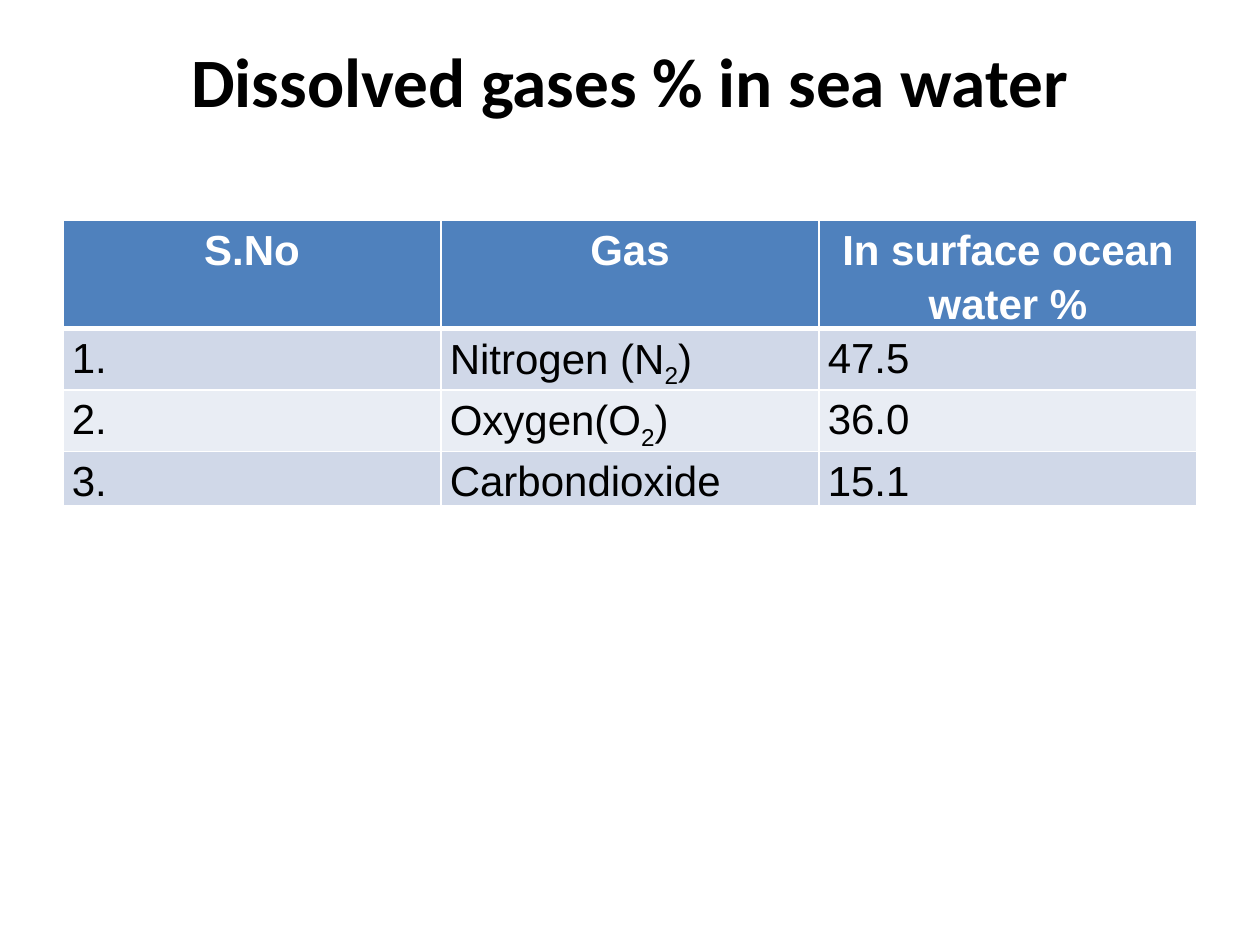
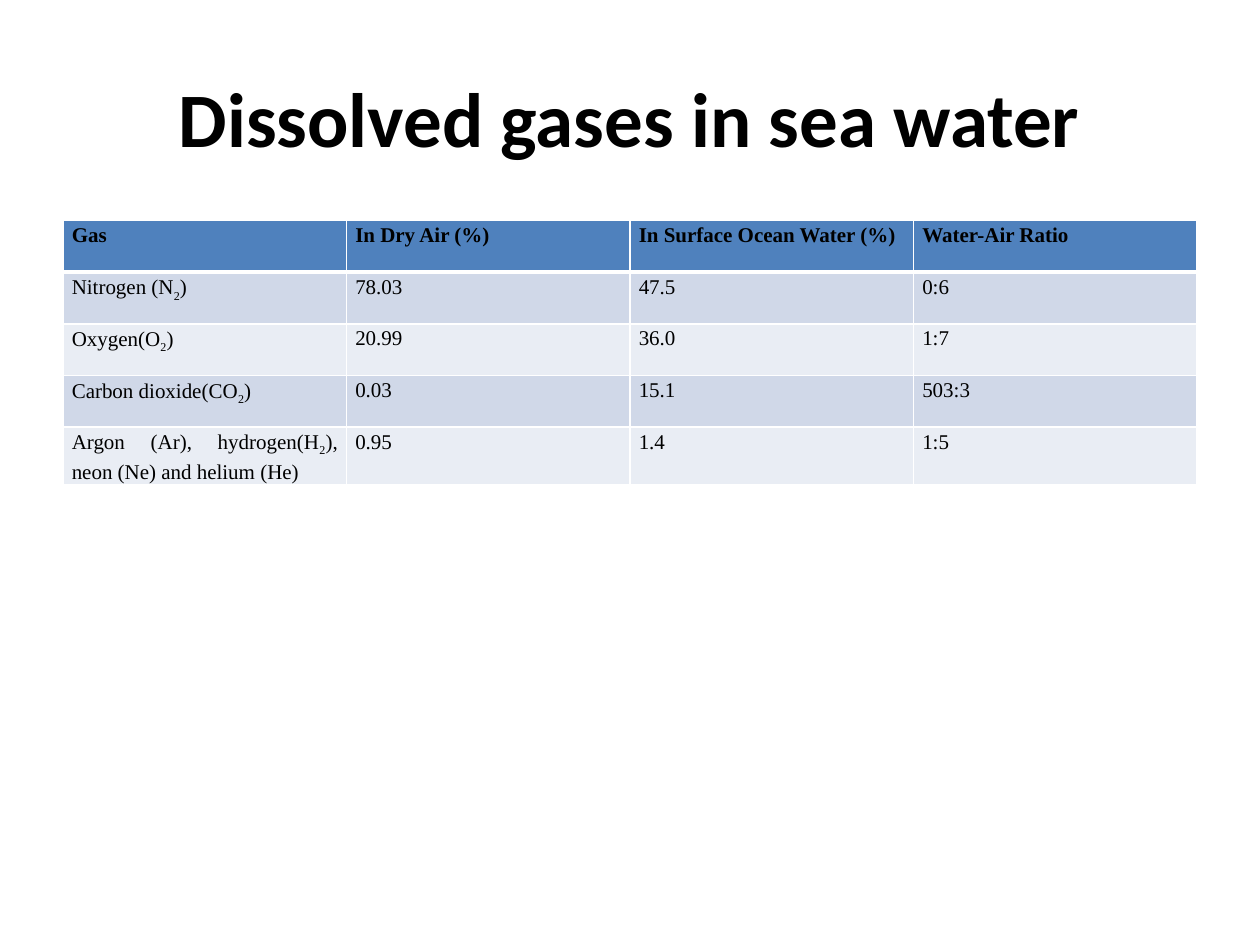
from lxml import etree
from pptx import Presentation
from pptx import util as u
from pptx.dml.color import RGBColor
from pptx.enum import text
from pptx.oxml import ns

BLACK = RGBColor(0x00, 0x00, 0x00)
WHITE = RGBColor(0xFF, 0xFF, 0xFF)
BLUE = RGBColor(0x4F, 0x81, 0xBD)
BANDS = (RGBColor(0xE9, 0xED, 0xF4), RGBColor(0xD0, 0xD8, 0xE8))
CENTER = text.PP_ALIGN.CENTER
FULL = text.PP_ALIGN.JUSTIFY


def put(frame, words, font, size, color=BLACK, bold=False, align=FULL, line=None, after=None):
    para = frame.paragraphs[0]
    para.alignment = align
    para.line_spacing = line
    para.space_after = after
    for i, part in enumerate(words.split("~")):
        run = para.add_run()
        run.text = part
        run.font.name = font
        run.font.size = u.Pt(size)
        run.font.bold = bold
        run.font.color.rgb = color
        if i % 2:
            run._r.get_or_add_rPr().set("baseline", "-25000")


def edge(cell, side, width):
    props = cell._tc.get_or_add_tcPr()
    line = etree.SubElement(props, ns.qn(f"a:ln{side}"), w=str(u.Pt(width)))
    fill = etree.SubElement(line, ns.qn("a:solidFill"))
    etree.SubElement(fill, ns.qn("a:srgbClr"), val=str(WHITE))


class Deck:
    left = u.Inches(0.5)
    width = u.Inches(9)

    def __init__(self):
        self.file = Presentation()
        self.file.slide_width = u.Inches(10)
        self.file.slide_height = u.Inches(7.5)
        self.slide = None

    def start(self):
        self.slide = self.file.slides.add_slide(self.file.slide_layouts[5])

    def title(self, words, size, raised=False):
        box = self.slide.shapes.title
        box.left, box.top = self.left, u.Inches(0.3)
        box.width, box.height = self.width, u.Inches(1.25)
        frame = box.text_frame
        frame.word_wrap = True
        frame.auto_size = text.MSO_AUTO_SIZE.NONE
        frame.vertical_anchor = text.MSO_ANCHOR.MIDDLE
        if raised:
            frame.vertical_anchor = text.MSO_ANCHOR.TOP
            frame.margin_top = 0
        put(frame, words, "Calibri", size, bold=True, align=CENTER)

    def table(self, rows, head, **style):
        high = u.Inches(0.41)
        grid = self.slide.shapes.add_table(
            len(rows), len(rows[0]), self.left, u.Inches(1.75),
            self.width, high * len(rows)).table
        for r, row in enumerate(rows):
            grid.rows[r].height = high
            for c, words in enumerate(row):
                cell = grid.cell(r, c)
                cell.margin_left = cell.margin_right = u.Inches(0.07)
                cell.margin_top = cell.margin_bottom = 0
                for side in "LRTB":
                    thick = (r, side) in ((0, "B"), (1, "T"))
                    edge(cell, side, 3 if thick else 1)
                cell.fill.solid()
                cell.fill.fore_color.rgb = BANDS[r % 2] if r else BLUE
                extra = {} if r else head
                put(cell.text_frame, words, line=1.15, bold=r == 0, **style, **extra)


def main():
    deck = Deck()

    deck.start()
    deck.title("Dissolved gases % in sea water", 39.6, raised=True)
    deck.table([
        ("S.No", "Gas", "In surface ocean water %"),
        ("1.", "Nitrogen (N~2~)", "47.5"),
        ("2.", "Oxygen(O~2~)", "36.0"),
        ("3.", "Carbondioxide", "15.1"),
    ], dict(color=WHITE, align=CENTER), font="Arial", size=24)

    deck.start()
    deck.title("Dissolved gases in sea water", 44)
    deck.table([
        ("Gas", "In Dry Air (%)", "In Surface Ocean Water (%)", "Water-Air Ratio"),
        ("Nitrogen (N~2~)", "78.03", "47.5", "0:6"),
        ("Oxygen(O~2~)", "20.99", "36.0", "1:7"),
        ("Carbon dioxide(CO~2~)", "0.03", "15.1", "503:3"),
        ("Argon (Ar), hydrogen(H~2~), neon (Ne) and helium (He)", "0.95", "1.4", "1:5"),
    ], {}, font="Times New Roman", size=12, after=u.Pt(10))

    deck.file.save("out.pptx")


if __name__ == "__main__":
    main()
